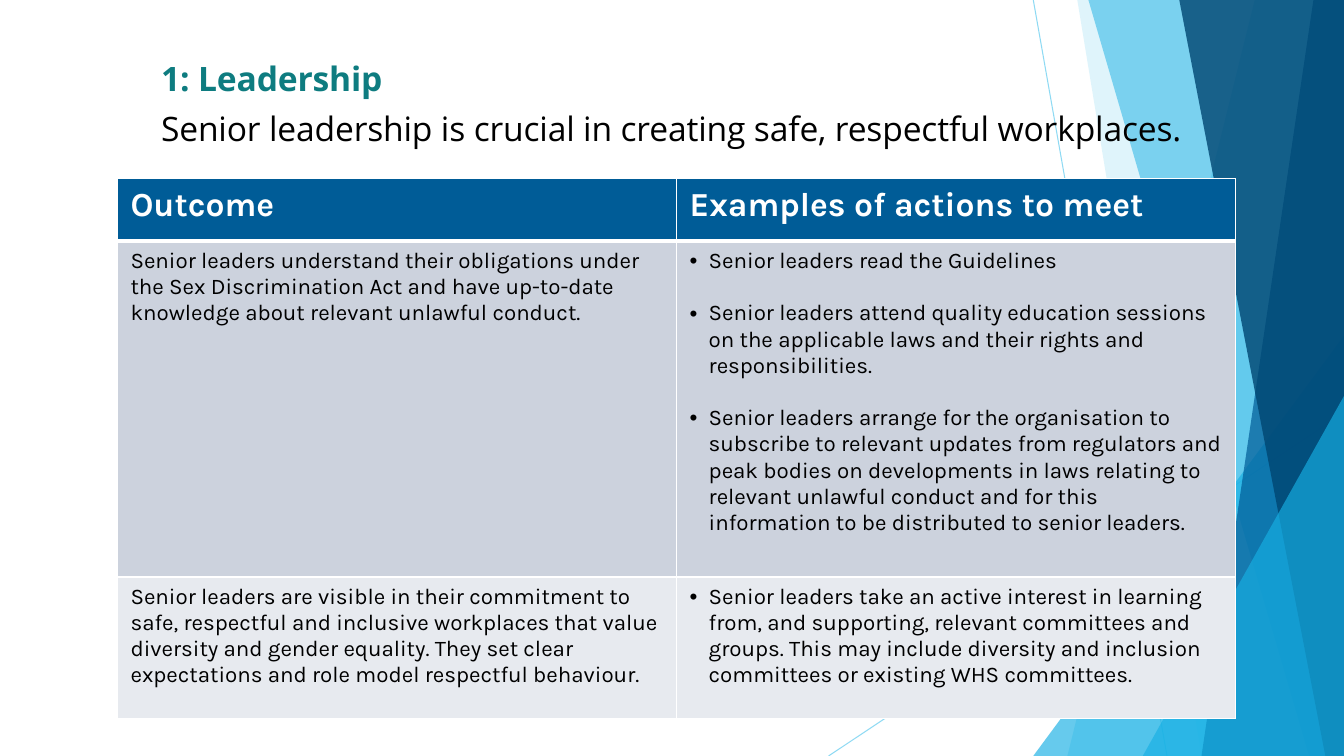
from lxml import etree
from pptx import Presentation
from pptx.dml.color import RGBColor
from pptx.enum import shapes, text
from pptx.oxml import ns
from pptx.util import Cm, Pt

WIDE, HIGH = 33.87, 19.05
SKY = RGBColor(0x5F, 0xCB, 0xEF)
CYAN = RGBColor(0x17, 0xB0, 0xE4)
BLUE = RGBColor(0x00, 0x5C, 0x97)
NAVY = RGBColor(0x00, 0x45, 0x71)
TEAL = RGBColor(0x0E, 0x7C, 0x80)
BLACK = RGBColor(0, 0, 0)
WHITE = RGBColor(0xFF, 0xFF, 0xFF)
GREY = RGBColor(0xCC, 0xD2, 0xDD)
PALE = RGBColor(0xE7, 0xEA, 0xEF)

HEADS = ["Outcome", "Examples of actions to meet"]
ROWS = [
    ("Senior leaders understand their obligations under the Sex Discrimination Act "
     "and have up-to-date knowledge about relevant unlawful conduct.",
     ["Senior leaders read the Guidelines",
      "Senior leaders attend quality education sessions on the applicable laws "
      "and their rights and responsibilities.",
      "Senior leaders arrange for the organisation to subscribe to relevant updates "
      "from regulators and peak bodies on developments in laws relating to relevant "
      "unlawful conduct and for this information to be distributed to senior leaders."]),
    ("Senior leaders are visible in their commitment to safe, respectful and inclusive "
     "workplaces that value diversity and gender equality. They set clear expectations "
     "and role model respectful behaviour.",
     ["Senior leaders take an active interest in learning from, and supporting, "
      "relevant committees and groups. This may include diversity and inclusion "
      "committees or existing WHS committees."]),
]


def add(parent, tag, **attrs):
    return etree.SubElement(parent, ns.qn(tag), attrs)


def fade(shape, alpha):
    for color in shape._element.spPr.iter(ns.qn("a:srgbClr")):
        add(color, "a:alpha", val=str(alpha * 1000))


def paint(shape, color, alpha):
    shape.shadow.inherit = False
    shape.fill.solid()
    shape.fill.fore_color.rgb = color
    fade(shape, alpha)
    shape.line.fill.background()


def panel(slide, top, base, color, alpha):
    form = slide.shapes.build_freeform(Cm(top), 0)
    form.add_line_segments([(Cm(x), Cm(y)) for x, y in
                            [(WIDE, 0), (WIDE, HIGH), (base, HIGH)]])
    paint(form.convert_to_shape(), color, alpha)


def wedge(slide, left, top):
    shape = slide.shapes.add_shape(
        shapes.MSO_SHAPE.ISOSCELES_TRIANGLE,
        Cm(left), Cm(top), Cm(WIDE - left), Cm(HIGH - top))
    shape.adjustments[0] = 1
    paint(shape, CYAN, 66)


def streak(slide, *ends):
    line = slide.shapes.add_connector(
        shapes.MSO_CONNECTOR.STRAIGHT, *[Cm(end) for end in ends])
    line.line.color.rgb = SKY
    line.line.width = Pt(0.75)
    fade(line, 70)
    add(line._element.spPr, "a:effectLst")


def style(para, face, size, color, bold=False):
    for run in para.runs:
        font = run.font
        font.name, font.size, font.bold = face, Pt(size), bold
        font.color.rgb = color


def title(slide):
    box = slide.shapes.add_textbox(Cm(4.01), Cm(1.24), Cm(29), Cm(2.8))
    frame = box.text_frame
    frame.word_wrap = True
    frame.margin_left = Cm(0.05)
    frame.margin_top = Cm(0.05)
    frame.margin_right = frame.margin_bottom = 0
    frame.text = ("1: Leadership\n"
                  "Senior leadership is crucial in creating safe, respectful workplaces.")
    for para, color, bold in zip(frame.paragraphs, [TEAL, BLACK], [True, False]):
        para.line_spacing = 1.18
        style(para, "Open Sans", 24, color, bold)
        for run in para.runs:
            run._r.get_or_add_rPr().set("spc", "-10")
    frame.paragraphs[1].space_before = Pt(1.3)


def border(cell, side, width):
    line = add(cell._tc.get_or_add_tcPr(), "a:ln" + side, w=str(Pt(width)))
    add(add(line, "a:solidFill"), "a:srgbClr", val=str(WHITE))


def bullet(para):
    props = para._p.get_or_add_pPr()
    props.set("marL", str(Cm(0.48)))
    props.set("indent", str(-Cm(0.48)))
    add(props, "a:buFont", typeface="Arial")
    add(props, "a:buChar", char="•")


def fill(cell, lines, color, ink, size, head=False, first=False, dots=False):
    cell.margin_left = cell.margin_right = Cm(0.33)
    cell.margin_top = cell.margin_bottom = Cm(0.17)
    cell.vertical_anchor = text.MSO_ANCHOR.TOP
    for side, width in zip("LRTB", [1, 1, 3 if first else 1, 3 if head else 1]):
        border(cell, side, width)
    cell.fill.solid()
    cell.fill.fore_color.rgb = color
    cell.text_frame.text = "\n".join(lines)
    for place, para in enumerate(cell.text_frame.paragraphs):
        if dots:
            bullet(para)
        if place:
            para.space_before = Pt(18.7)
        style(para, "Karla", size, ink, head)


def grid(slide):
    table = slide.shapes.add_table(
        3, 2, Cm(2.96), Cm(4.5), Cm(28.18), Cm(13.6)).table
    for row, height in zip(table.rows, [1.58, 8.46, 3.56]):
        row.height = Cm(height)
    for col, head in enumerate(HEADS):
        fill(table.cell(0, col), [head], BLUE, WHITE, 24, head=True)
    for row, ((goal, acts), color) in enumerate(zip(ROWS, [GREY, PALE]), 1):
        first = row == 1
        fill(table.cell(row, 0), [goal], color, BLACK, 16, first=first)
        fill(table.cell(row, 1), acts, color, BLACK, 16, first=first, dots=True)


def main():
    deck = Presentation()
    deck.slide_width, deck.slide_height = Cm(WIDE), Cm(HIGH)
    slide = deck.slides.add_slide(deck.slide_layouts[6])
    streak(slide, 26.04, 0, 29.41, HIGH)
    streak(slide, 34.11, 10.24, 20.88, HIGH)
    panel(slide, 31.62, 26.9, SKY, 36)
    panel(slide, 27.15, 30.28, SKY, 20)
    wedge(slide, 26.04, 8.46)
    panel(slide, 27.43, 32.99, CYAN, 50)
    panel(slide, 33.1, 30.28, BLUE, 70)
    panel(slide, 29.72, 33.4, NAVY, 80)
    wedge(slide, 28.8, 9.98)
    title(slide)
    grid(slide)
    deck.save("out.pptx")


if __name__ == "__main__":
    main()
